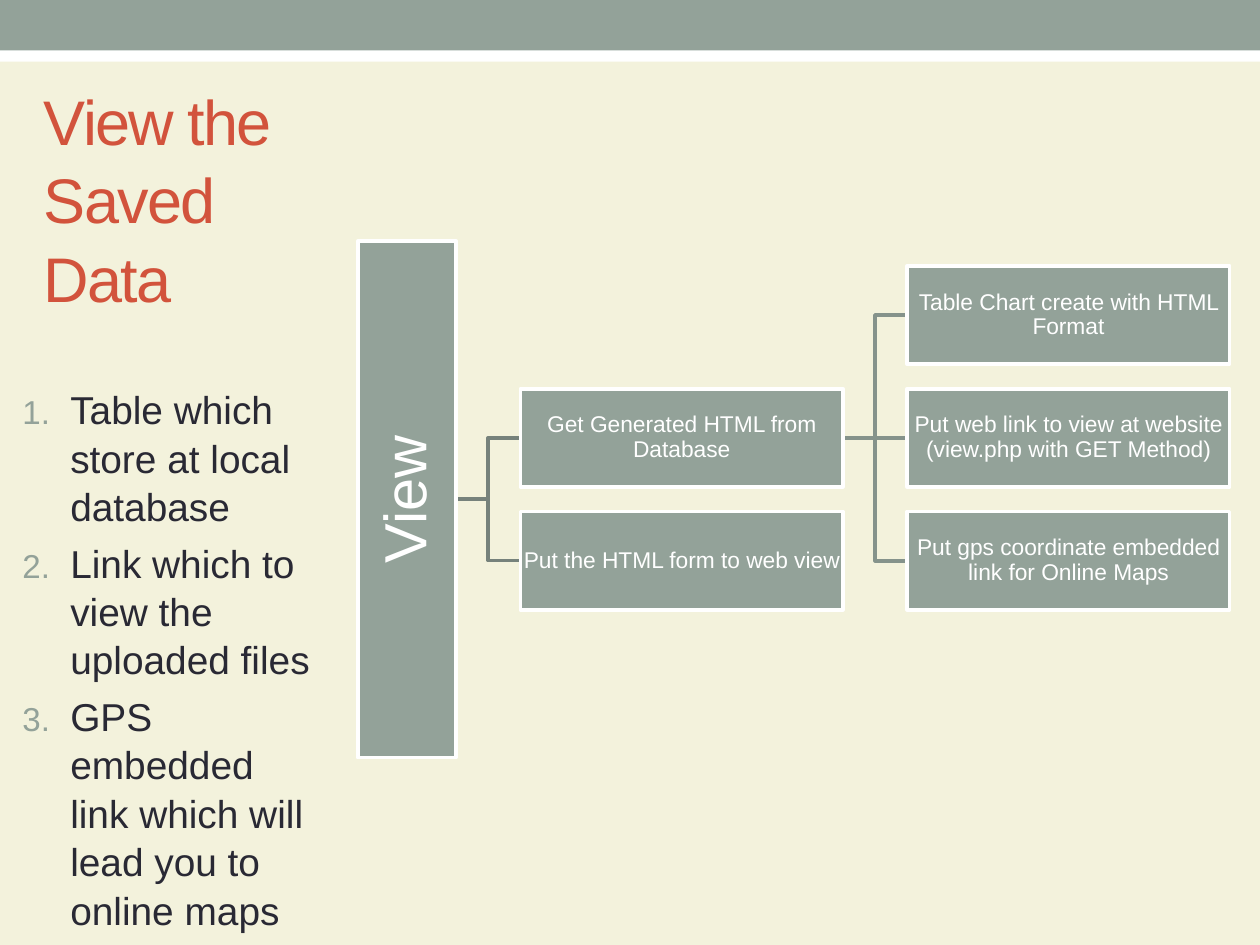
from dataclasses import dataclass

from lxml.etree import SubElement
from pptx import Presentation
from pptx.dml.color import RGBColor as RGB
from pptx.enum.shapes import MSO_CONNECTOR as Link, MSO_SHAPE as Shape
from pptx.enum.text import MSO_ANCHOR as Anchor, PP_ALIGN as Align
from pptx.oxml.ns import qn
from pptx.util import Inches, Pt

# Content
TITLE = "View the Saved Data"
STEPS = [
    "Table which store at local database",
    "Link which to view the uploaded files",
    "GPS embedded link which will lead you to online maps",
]
ROOT = "View"
# (label, column, row) on the diagram grid
GET_HTML = ("Get Generated HTML from Database", 0, 1)
WEB_VIEW = ("Put the HTML form to web view", 0, 2)
OUTPUTS = [
    ("Table Chart create with HTML Format", 1, 0),
    ("Put web link to view at website (view.php with GET Method)", 1, 1),
    ("Put gps coordinate embedded link for Online Maps", 1, 2),
]


@dataclass(frozen=True)
class Theme:
    font: str = "Arial"
    paper: RGB = RGB(0xF3, 0xF2, 0xDC)
    sage: RGB = RGB(0x93, 0xA2, 0x99)
    white: RGB = RGB(0xFF, 0xFF, 0xFF)
    rust: RGB = RGB(0xD2, 0x53, 0x3C)
    ink: RGB = RGB(0x29, 0x29, 0x34)
    root_link: RGB = RGB(0x76, 0x82, 0x7B)
    output_link: RGB = RGB(0x85, 0x93, 0x8B)
    title_size: float = 36
    step_size: float = 22.2
    root_size: float = 34
    box_size: float = 13
    stroke: float = 2.08


THEME = Theme()

# Diagram grid, in inches
BOX_W, BOX_H, ROOT_LENGTH = 2.56, 0.78, 4.1
GAP_X, GAP_Y = 0.51, 0.195
GRID_LEFT, GRID_TOP = 4.13, 2.11
ROOT_RIGHT = GRID_LEFT - GAP_X
ROOT_MIDDLE = GRID_TOP + 2 * BOX_H + 1.5 * GAP_Y

deck = Presentation()
deck.slide_width, deck.slide_height = Inches(10), Inches(7.5)
slide = deck.slides.add_slide(deck.slide_layouts[6])
slide.background.fill.solid()
slide.background.fill.fore_color.rgb = THEME.paper


def style(paragraph, size, color):
    font = paragraph.font
    font.name, font.size, font.color.rgb = THEME.font, Pt(size), color


def add_rect(left, top, width, height, fill, outlined=False):
    rect = slide.shapes.add_shape(Shape.RECTANGLE, *map(Inches, (left, top, width, height)))
    rect.shadow.inherit = False
    rect.fill.solid()
    rect.fill.fore_color.rgb = fill
    if outlined:
        rect.line.color.rgb, rect.line.width = THEME.white, Pt(THEME.stroke)
    else:
        rect.line.fill.background()
    return rect


def add_node(label, left, top, width, size, inset):
    node = add_rect(left, top, width, BOX_H, THEME.sage, outlined=True)
    frame = node.text_frame
    frame.word_wrap, frame.vertical_anchor = True, Anchor.MIDDLE
    frame.margin_left = frame.margin_right = Inches(inset)
    frame.margin_top = frame.margin_bottom = Inches(inset)
    paragraph = frame.paragraphs[0]
    paragraph.text, paragraph.alignment = label, Align.CENTER
    paragraph.line_spacing = 0.9
    style(paragraph, size, THEME.white)
    return node


def add_text(left, top, width, height, anchor):
    frame = slide.shapes.add_textbox(*map(Inches, (left, top, width, height))).text_frame
    frame.word_wrap, frame.vertical_anchor = True, anchor
    return frame


def cell(column, row):
    return GRID_LEFT + column * (BOX_W + GAP_X), GRID_TOP + row * (BOX_H + GAP_Y)


def add_link(start_x, start_y, box, color):
    end_x, end_y = cell(*box[1:])
    end_y += BOX_H / 2
    kind = Link.STRAIGHT if abs(start_y - end_y) < 0.01 else Link.ELBOW
    link = slide.shapes.add_connector(kind, *map(Inches, (start_x, start_y, end_x, end_y)))
    link.line.color.rgb, link.line.width = color, Pt(THEME.stroke)
    SubElement(link._element.spPr, qn("a:effectLst"))


# Header bands
add_rect(0, 0.24, 10, 0.25, THEME.white)
add_rect(0, 0, 10, 0.4, THEME.sage)

# Title
heading = add_text(0.25, 1.17, 2.25, 1.38, Anchor.BOTTOM).paragraphs[0]
heading.text, heading.line_spacing = TITLE, 1.04
style(heading, THEME.title_size, THEME.rust)
heading.runs[0]._r.get_or_add_rPr().set("spc", "-100")

# Numbered steps
steps = add_text(0.08, 3, 2.5, 4.42, Anchor.TOP)
for index, step in enumerate(STEPS):
    item = steps.add_paragraph() if index else steps.paragraphs[0]
    item.text, item.line_spacing = step, 1.04
    item.space_before = Pt(0.2 * THEME.step_size)
    props = item._p.get_or_add_pPr()
    props.set("marL", str(Inches(0.38)))
    props.set("indent", str(-Inches(0.38)))
    SubElement(SubElement(props, qn("a:buClr")), qn("a:srgbClr"), val=str(THEME.sage))
    SubElement(props, qn("a:buSzPct"), val="85000")
    SubElement(props, qn("a:buFont"), typeface=THEME.font)
    SubElement(props, qn("a:buAutoNum"), type="arabicPeriod")
    style(item, THEME.step_size, THEME.ink)

# Diagram links, behind the boxes
for box in (GET_HTML, WEB_VIEW):
    add_link(ROOT_RIGHT, ROOT_MIDDLE, box, THEME.root_link)
hub_left, hub_top = cell(*GET_HTML[1:])
for box in OUTPUTS:
    add_link(hub_left + BOX_W, hub_top + BOX_H / 2, box, THEME.output_link)

# Diagram boxes: the root is a wide box turned upright
root = add_node(ROOT, ROOT_RIGHT - (BOX_H + ROOT_LENGTH) / 2, ROOT_MIDDLE - BOX_H / 2,
                ROOT_LENGTH, THEME.root_size, 0.02)
root.rotation = 270
for label, column, row in (GET_HTML, WEB_VIEW, *OUTPUTS):
    add_node(label, *cell(column, row), BOX_W, THEME.box_size, 0.01)

deck.save("out.pptx")
